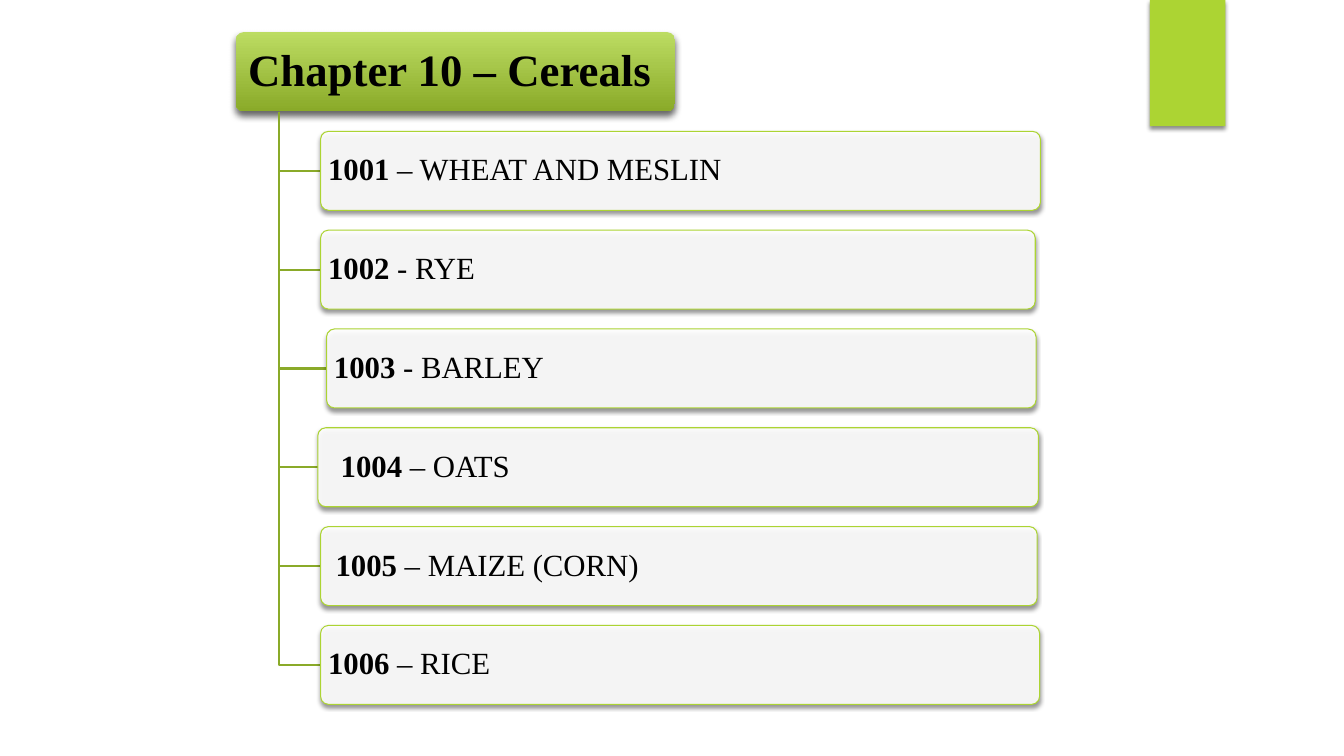
"""Build a slide listing the headings of Chapter 10 as a small tree."""
import pptx
import pptx.util
import pptx.dml.color
import pptx.enum.shapes
import pptx.enum.text
import pptx.oxml
import pptx.oxml.ns

Cm = pptx.util.Cm
Pt = pptx.util.Pt
KIND = pptx.enum.shapes.MSO_SHAPE
ALIGN = pptx.enum.text.PP_ALIGN
NS = pptx.oxml.ns.nsdecls("a")


def paint(color, code):
    color.rgb = pptx.dml.color.RGBColor.from_string(code)


def plate(kind, left, top, width, height, runs, size, inset, blur, drop, dark):
    shape = slide.shapes.add_shape(kind, Cm(left), Cm(top), Cm(width), Cm(height))
    shape.shadow.inherit = False
    shape.line.fill.background()
    shape.fill.solid()
    paint(shape.fill.fore_color, "ACD433")
    shape._element.spPr.find(pptx.oxml.ns.qn("a:effectLst")).append(pptx.oxml.parse_xml(
        f'<a:outerShdw {NS} blurRad="{Pt(blur)}" dist="{Pt(drop)}" dir="5400000" '
        f'rotWithShape="0"><a:srgbClr val="000000"><a:alpha val="{dark * 1000}"/>'
        '</a:srgbClr></a:outerShdw>'))
    if kind == KIND.ROUNDED_RECTANGLE:
        shape.adjustments[0] = 0.1
    frame = shape.text_frame
    frame.word_wrap = True
    frame.vertical_anchor = pptx.enum.text.MSO_ANCHOR.MIDDLE
    frame.margin_left, frame.margin_right = Cm(inset[0]), Cm(inset[1])
    frame.margin_top = frame.margin_bottom = Cm(0.08)
    line = frame.paragraphs[0]
    line.alignment = ALIGN.LEFT
    line.line_spacing = 0.9
    for spot, text in enumerate(runs):
        run = line.add_run()
        run.text = text
        run.font.name = "Times New Roman"
        run.font.size = Pt(size)
        run.font.bold = spot == 0
        paint(run.font.color, "000000")
    return shape


deck = pptx.Presentation()
deck.slide_width, deck.slide_height = Cm(33.87), Cm(19.05)
slide = deck.slides.add_slide(deck.slide_layouts[6])

plate(KIND.RECTANGLE, 28.98, 0, 1.9, 3.18, [], 18, (0.25, 0.25), 3, 2, 45)

title = plate(KIND.ROUNDED_RECTANGLE, 5.94, 0.81, 11.07, 1.99,
              ["Chapter 10 – Cereals"], 32, (0.18, 0.46), 5, 3, 60)
title.text_frame.paragraphs[0].alignment = ALIGN.CENTER
title.fill.gradient()
title.fill.gradient_angle = 270
for stop, code in zip(title.fill.gradient_stops, ("BCDC62", "8AAA29")):
    paint(stop.color, code)

TRUNK, BASE = 7.04, 2.81
FIRST, PITCH, HIGH = 3.31, 2.49, 1.99
rows = [
    ("1001", " – WHEAT AND MESLIN", 8.08, 18.14, 0.13),
    ("1002", " - RYE", 8.08, 18.01, 0.13),
    ("1003", " - BARLEY", 8.23, 17.88, 0.13),
    ("1004", " – OATS", 8.01, 18.16, 0.52),
    ("1005", " – MAIZE (CORN)", 8.08, 18.06, 0.32),
    ("1006", " – RICE", 8.08, 18.12, 0.13),
]
for index, (code, name, left, width, inset) in enumerate(rows):
    top = FIRST + index * PITCH
    middle = Cm(top + HIGH / 2)
    pen = slide.shapes.build_freeform(Cm(TRUNK), Cm(BASE))
    pen.add_line_segments([(Cm(TRUNK), middle), (Cm(left), middle)], close=False)
    branch = pen.convert_to_shape()
    branch.shadow.inherit = False
    branch.fill.background()
    branch.line.width = Pt(1.5)
    paint(branch.line.color, "8AAA29")

    box = plate(KIND.ROUNDED_RECTANGLE, left, top, width, HIGH,
                [code, name], 22, (inset, 0.13), 3, 2, 45)
    paint(box.fill.fore_color, "FFFFFF")
    tint = box._element.spPr.find(pptx.oxml.ns.qn("a:solidFill"))[0]
    tint.append(pptx.oxml.parse_xml(f'<a:alpha {NS} val="90000"/>'))
    box.line.width = Pt(0.75)
    paint(box.line.color, "ACD433")

deck.save("out.pptx")
